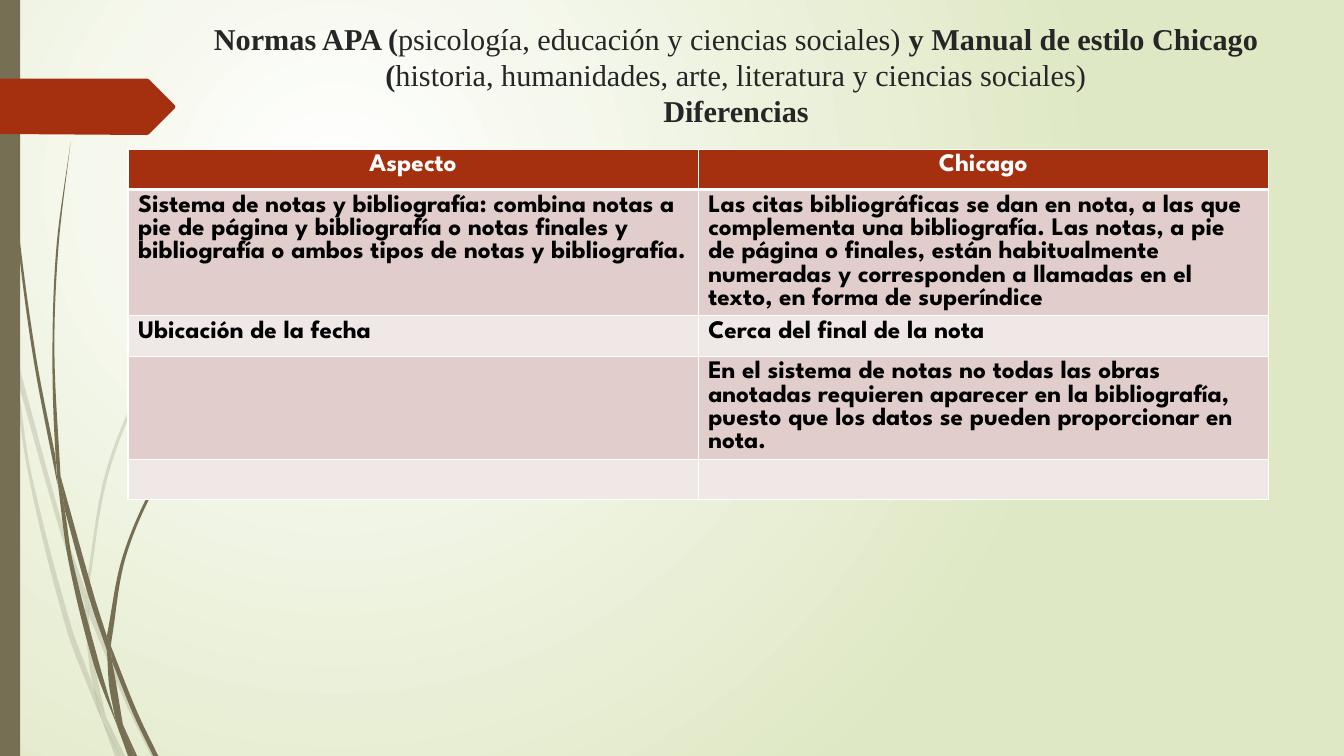
from itertools import pairwise
from math import dist

from lxml.etree import SubElement
from pptx import Presentation
from pptx.dml.color import RGBColor
from pptx.enum.shapes import MSO_SHAPE
from pptx.enum.text import MSO_ANCHOR, PP_ALIGN
from pptx.oxml.ns import qn
from pptx.util import Inches, Pt

OLIVE, RUST, WHITE, BLACK, CHARCOAL = "766F54", "A53010", "FFFFFF", "000000", "262626"
BAND_COLORS = ("E1CDCC", "F0E8E7")

TITLE_LINES = [
    [("Normas APA (", True), ("psicología, educación y ciencias sociales)", False),
     (" y Manual de estilo Chicago (", True),
     ("historia, humanidades, arte, literatura y ciencias sociales)", False)],
    [("Diferencias", True)],
]

COMPARISON = [
    ("Aspecto", "Chicago"),
    ("Sistema de notas y bibliografía: combina notas a pie de página y bibliografía "
     "o notas finales y bibliografía o ambos tipos de notas y bibliografía.",
     "Las citas bibliográficas se dan en nota, a las que complementa una bibliografía. "
     "Las notas, a pie de página o finales, están habitualmente numeradas y "
     "corresponden a llamadas en el texto, en forma de superíndice"),
    ("Ubicación de la fecha", "Cerca del final de la nota"),
    ("", "En el sistema de notas no todas las obras anotadas requieren aparecer en la "
     "bibliografía, puesto que los datos se pueden proporcionar en nota."),
    ("", ""),
]

# Each blade of grass is a pair of edges: one followed forward, one followed back.
PALE_BLADES = [
    ([(0, 2.82), (0.09, 3.22), (0.11, 3.5)], [(0.1, 3.44), (0, 2.99)]),
    ([(0.14, 3.45), (0.62, 5.2), (0.85, 5.86)], [(0.84, 5.99), (0.58, 5.22), (0.17, 3.76)]),
    ([(0.88, 5.96), (1.27, 6.92), (1.55, 7.5)], [(1.5, 7.5), (1.23, 6.94), (0.88, 6.1)]),
    ([(1.05, 7.11), (1.24, 7.5)], [(1.19, 7.5)]),
    ([(0.11, 3.5), (0.17, 3.76), (0.31, 4.69), (0.7, 6.19), (0.93, 6.83), (1.01, 7.14)],
     [(1.01, 7.14), (0.92, 6.93), (0.65, 6.21), (0.28, 4.7), (0.11, 3.5)]),
    ([(0.84, 5.99), (0.88, 6.1), (0.91, 6.46), (1.05, 7.11)],
     [(1.05, 7.11), (0.93, 6.83), (0.87, 6.46), (0.84, 5.99)]),
    ([(0.88, 5.96), (0.88, 5.84), (1.1, 4.62), (1.6, 3.49), (2.29, 2.45), (2.9, 1.75),
      (3.12, 1.53)],
     [(3.12, 1.53), (2.89, 1.75), (2.28, 2.44), (1.58, 3.48), (1.07, 4.61), (0.85, 5.84)]),
    ([(1.01, 7.14), (1.14, 7.5)], [(1.19, 7.5)]),
    ([(0.85, 5.86), (0.88, 5.96), (0.88, 6.1)], [(0.84, 5.99)]),
    ([(0.93, 6.83), (1.05, 7.11), (1.19, 7.5)], [(1.19, 7.5), (1.01, 7.14), (0.93, 6.83)]),
]
DARK_BLADES = [
    ([(0.03, 0), (0.07, 1.1), (0.17, 2.33), (0.33, 3.55), (0.57, 4.81)],
     [(0.55, 4.53), (0.36, 3.55), (0.19, 2.32), (0.08, 1.09), (0.04, 0)]),
    ([(0.6, 4.72), (0.93, 5.9), (1.06, 6.31)], [(1.06, 6.45), (0.88, 5.92), (0.64, 5.05)]),
    ([(1.1, 6.41), (1.36, 7.06), (1.57, 7.5)], [(1.52, 7.5), (1.32, 7.08), (1.11, 6.56)]),
    ([(0.57, 4.77), (0.64, 5.05), (0.72, 5.56), (0.98, 6.57), (1.17, 7.22)],
     [(1.17, 7.22), (0.93, 6.59), (0.68, 5.57), (0.57, 4.77)]),
    ([(0.6, 4.72), (0.54, 3.49), (0.58, 2.45), (0.7, 1.41)],
     [(0.7, 1.41), (0.56, 2.45), (0.52, 3.49), (0.55, 4.49), (0.6, 4.72)]),
    ([(1.22, 7.19), (1.36, 7.5)], [(1.33, 7.5)]),
    ([(0.55, 4.49), (0.6, 4.72), (0.64, 5.05)], [(0.64, 5.05), (0.57, 4.77)]),
    ([(1.1, 6.41), (1.11, 6.33), (1.25, 5.52), (1.58, 4.76), (2.05, 4.06), (2.6, 3.44)],
     [(2.6, 3.44), (2.04, 4.05), (1.56, 4.74), (1.22, 5.51), (1.06, 6.31)]),
    ([(1.17, 7.22), (1.31, 7.5)], [(1.27, 7.5)]),
    ([(1.06, 6.45), (1.11, 6.56), (1.22, 7.19)], [(1.22, 7.19), (1.1, 6.91), (1.06, 6.45)]),
    ([(1.06, 6.31), (1.1, 6.41), (1.11, 6.56)], [(1.06, 6.45)]),
    ([(1.1, 6.91), (1.22, 7.19), (1.33, 7.5)], [(1.3, 7.5), (1.17, 7.22), (1.1, 6.91)]),
]
RIBBON = [(0, 0.78), (1.46, 0.78), (1.48, 0.79), (1.73, 1.04), (1.74, 1.06),
          (1.73, 1.08), (1.48, 1.33), (1.46, 1.34), (0, 1.33)]


def rgb(hex_color):
    return RGBColor.from_string(hex_color)


def curve_controls(points):
    """Return the two Bézier control points of each span of a smooth edge."""
    if len(points) < 3:
        return [None] * (len(points) - 1)
    tangents = []
    for i in range(len(points)):
        near = points[max(i - 1, 0):i + 2]
        length = sum(dist(a, b) for a, b in pairwise(near))
        tangents.append([(b - a) / length for a, b in zip(near[0], near[-1])])
    controls = []
    for (p, q), (m, n) in zip(pairwise(points), pairwise(tangents)):
        reach = dist(p, q) / 3
        controls.append(([a + reach * d for a, d in zip(p, m)],
                         [a - reach * d for a, d in zip(q, n)]))
    return controls


def paint(shape, color, opacity=100):
    shape.shadow.inherit = False
    shape.fill.solid()
    shape.fill.fore_color.rgb = rgb(color)
    shape.line.fill.background()
    if opacity < 100:
        srgb = shape.fill._xPr.find(".//" + qn("a:srgbClr"))
        SubElement(srgb, qn("a:alpha"), val=str(opacity * 1000))


def add_outline(slide, points, color, opacity=100):
    start, *rest = [(Inches(x), Inches(y)) for x, y in points]
    builder = slide.shapes.build_freeform(*start)
    builder.add_line_segments(rest, close=True)
    outline = builder.convert_to_shape()
    paint(outline, color, opacity)
    return outline


def add_blade(slide, forward, back, opacity):
    controls = curve_controls(forward)
    if forward[-1] == back[0]:
        back_points = back[1:]
    else:
        back_points = back
        controls.append(None)
    controls += curve_controls(back)
    blade = add_outline(slide, forward + back_points, OLIVE, opacity)
    sides = blade._element.findall(".//" + qn("a:lnTo"))
    for side, pair in zip(sides, controls):
        if pair:
            side.tag = qn("a:cubicBezTo")
            for position, (x, y) in enumerate(pair):
                point = SubElement(side, qn("a:pt"), x=str(Inches(x) - blade.left),
                                   y=str(Inches(y) - blade.top))
                side.insert(position, point)


def add_background(slide):
    fill = slide.background.fill
    fill.gradient()
    for stop, color in zip(fill.gradient_stops, (WHITE, "DFE8C4")):
        stop.color.rgb = rgb(color)
    gradient = slide._element.find(".//" + qn("a:gradFill"))
    gradient.remove(gradient.find(qn("a:lin")))
    circle = SubElement(gradient, qn("a:path"), path="circle")
    SubElement(circle, qn("a:fillToRect"), l="50000", t="50000", r="100000", b="100000")


def add_run(paragraph, text, font, size, color, bold):
    run = paragraph.add_run()
    run.text = text
    run.font.name, run.font.size, run.font.bold = font, Pt(size), bold
    run.font.color.rgb = rgb(color)


def add_title(slide):
    box = slide.shapes.add_textbox(Inches(1.79), Inches(0.15), Inches(11.02), Inches(1.13))
    frame = box.text_frame
    frame.word_wrap = True
    frame.vertical_anchor = MSO_ANCHOR.TOP
    heading = frame.paragraphs[0]
    heading.alignment = PP_ALIGN.CENTER
    for number, line in enumerate(TITLE_LINES):
        if number:
            heading.add_line_break()
        for text, bold in line:
            add_run(heading, text, "Times New Roman", 21.6, CHARCOAL, bold)


def add_borders(cell, bottom_width):
    properties = cell._tc.get_or_add_tcPr()
    for side, width in (("L", 1), ("R", 1), ("T", 1), ("B", bottom_width)):
        border = SubElement(properties, qn(f"a:ln{side}"), w=str(Pt(width)))
        SubElement(SubElement(border, qn("a:solidFill")), qn("a:srgbClr"), val=WHITE)


def add_comparison(slide):
    row_height = Inches(0.4)
    table = slide.shapes.add_table(len(COMPARISON), 2, Inches(1.27), Inches(1.48),
                                   Inches(11.31), row_height * len(COMPARISON)).table
    for r, texts in enumerate(COMPARISON):
        header = r == 0
        for c, text in enumerate(texts):
            cell = table.cell(r, c)
            add_borders(cell, 3 if header else 1)
            cell.fill.solid()
            cell.fill.fore_color.rgb = rgb(RUST if header else BAND_COLORS[(r - 1) % 2])
            paragraph = cell.text_frame.paragraphs[0]
            if header:
                paragraph.alignment = PP_ALIGN.CENTER
            if text:
                paragraph.line_spacing = Pt(16.6)
                add_run(paragraph, text, "League Spartan", 18, WHITE if header else BLACK, True)


def main():
    presentation = Presentation()
    presentation.slide_width, presentation.slide_height = Inches(13.33), Inches(7.5)
    slide = presentation.slides.add_slide(presentation.slide_layouts[6])
    add_background(slide)
    for blades, opacity in ((PALE_BLADES, 20), (DARK_BLADES, 100)):
        for forward, back in blades:
            add_blade(slide, forward, back, opacity)
    side_bar = slide.shapes.add_shape(MSO_SHAPE.RECTANGLE, 0, 0, Inches(0.2), Inches(7.5))
    paint(side_bar, OLIVE)
    add_outline(slide, RIBBON, RUST)
    add_title(slide)
    add_comparison(slide)
    presentation.save("out.pptx")


if __name__ == "__main__":
    main()
